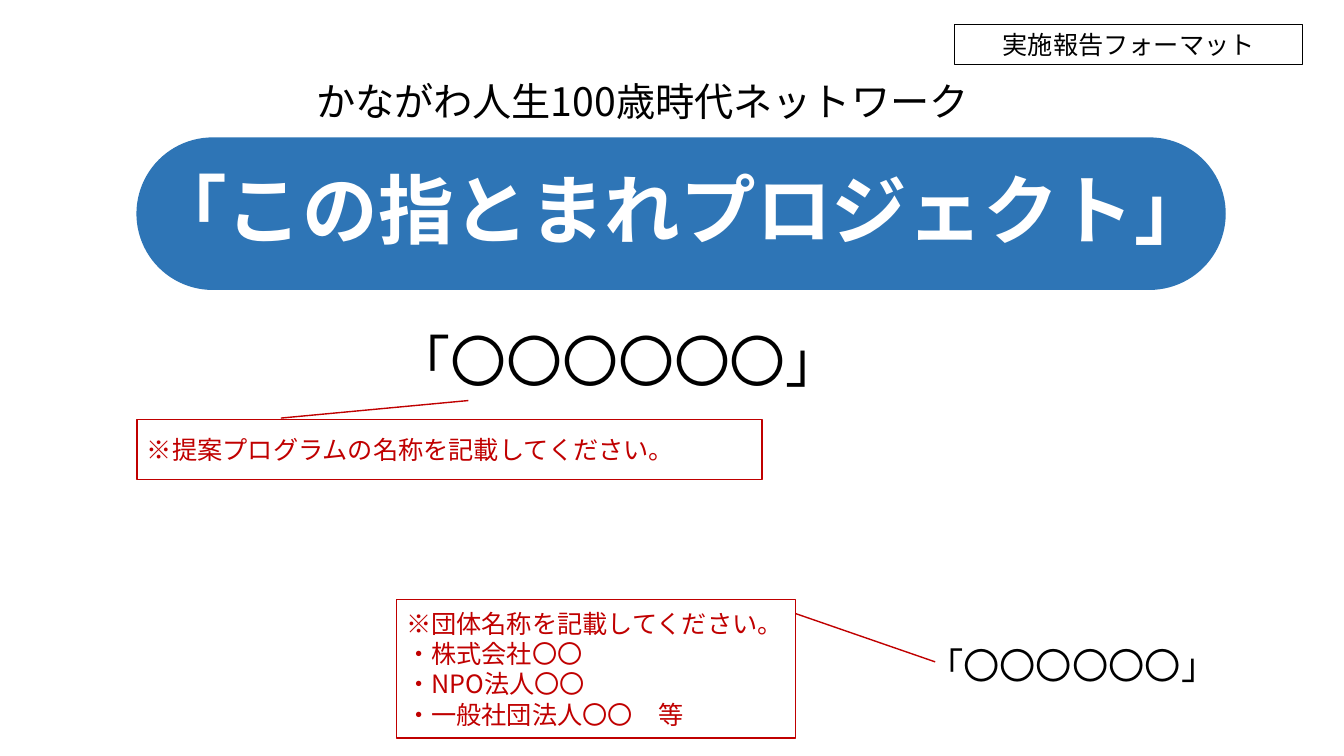
from lxml import etree
from pptx import Presentation
from pptx.dml import color
from pptx.enum import lang, shapes, text
from pptx.oxml import ns
from pptx.util import Inches, Pt

FACE = "Noto Sans CJK JP"
BLUE, RED, BLACK, WHITE = "2E75B6", "C00000", "000000", "FFFFFF"
KIND = shapes.MSO_SHAPE
MID, TOP, LOW = text.MSO_ANCHOR.MIDDLE, text.MSO_ANCHOR.TOP, text.MSO_ANCHOR.BOTTOM
FIT, FIXED = text.MSO_AUTO_SIZE.SHAPE_TO_FIT_TEXT, text.MSO_AUTO_SIZE.NONE
LEFT, MIDST = text.PP_ALIGN.LEFT, text.PP_ALIGN.CENTER


def write(shape, lines, size, tint, bold=False, anchor=TOP, auto=FIXED, **para):
    """Fill a shape with one paragraph per line, in Latin and East Asian face alike."""
    frame = shape.text_frame
    frame.word_wrap = True
    frame.auto_size, frame.vertical_anchor = auto, anchor
    frame.text = "\n".join(lines)
    look = {"size": Pt(size), "bold": bold, "name": FACE,
            "language_id": lang.MSO_LANGUAGE_ID.JAPANESE}
    for p in frame.paragraphs:
        for key, val in para.items():
            setattr(p, key, val)
        font = p.runs[0].font
        font.color.rgb = color.RGBColor.from_string(tint)
        for key, val in look.items():
            setattr(font, key, val)
        east = etree.SubElement(p.runs[0]._r.get_or_add_rPr(), ns.qn("a:ea"))
        east.set("typeface", FACE)


def draw(kind, at, fill, line, width, bends=()):
    shape = slide.shapes.add_shape(kind, *map(Inches, at))
    shape.shadow.inherit = False
    if fill:
        shape.fill.solid()
        shape.fill.fore_color.rgb = color.RGBColor.from_string(fill)
    else:
        shape.fill.background()
    shape.line.color.rgb = color.RGBColor.from_string(line)
    shape.line.width = Pt(width)
    for i, bend in enumerate(bends):
        shape.adjustments[i] = bend
    return shape


prs = Presentation()
prs.slide_width, prs.slide_height = Inches(13.33), Inches(7.5)
slide = prs.slides.add_slide(prs.slide_layouts[0])
title, sub = slide.placeholders

# Headline on a blue pill
pill = draw(KIND.ROUNDED_RECTANGLE, (1.36, 1.37, 10.79, 1.5), BLUE, BLUE, 1, [0.5])
title.element.addprevious(pill.element)
heads = [
    (title, (1.2, 0.65, 10.34, 0.64), "かながわ人生100歳時代ネットワーク", 28, BLACK, False, LOW, 0),
    (sub, (0.91, 1.67, 11.68, 1.05), "「この指とまれプロジェクト」", 54, WHITE, True, TOP, 10),
]
for holder, at, words, size, tint, bold, anchor, gap in heads:
    for key, val in zip(("left", "top", "width", "height"), at):
        setattr(holder, key, Inches(val))
    write(holder, [words], size, tint, bold, anchor,
          alignment=MIDST, line_spacing=0.9, space_before=Pt(gap))

# Names to fill in: programme, then group
for at, size in [((3.29, 3.27, 5.68, 0.8), 40), ((9.04, 6.38, 3.19, 0.5), 25.9)]:
    box = slide.shapes.add_textbox(*map(Inches, at))
    write(box, ["「〇〇〇〇〇〇」"], size, BLACK,
          alignment=MIDST, line_spacing=0.9, space_before=Pt(10))

# Format label
label = draw(KIND.RECTANGLE, (9.47, 0.24, 3.45, 0.4), None, BLACK, 0.75)
write(label, ["実施報告フォーマット"], 18, BLACK, auto=FIT, alignment=MIDST)

# Red hints that point at the names
hints = [
    ((1.36, 4.16, 6.2, 0.6), (-0.02, 0.23, -0.31, 0.53),
     ["※提案プログラムの名称を記載してください。"]),
    ((3.93, 5.95, 3.96, 1.37), (0.1, 1, 0.45, 1.35),
     ["※団体名称を記載してください。", "・株式会社〇〇", "・NPO法人〇〇", "・一般社団法人〇〇　等"]),
]
for at, bends, lines in hints:
    hint = draw(KIND.LINE_CALLOUT_1, at, WHITE, RED, 1, bends)
    write(hint, lines, 18, RED, anchor=MID, alignment=LEFT)

prs.save("out.pptx")
